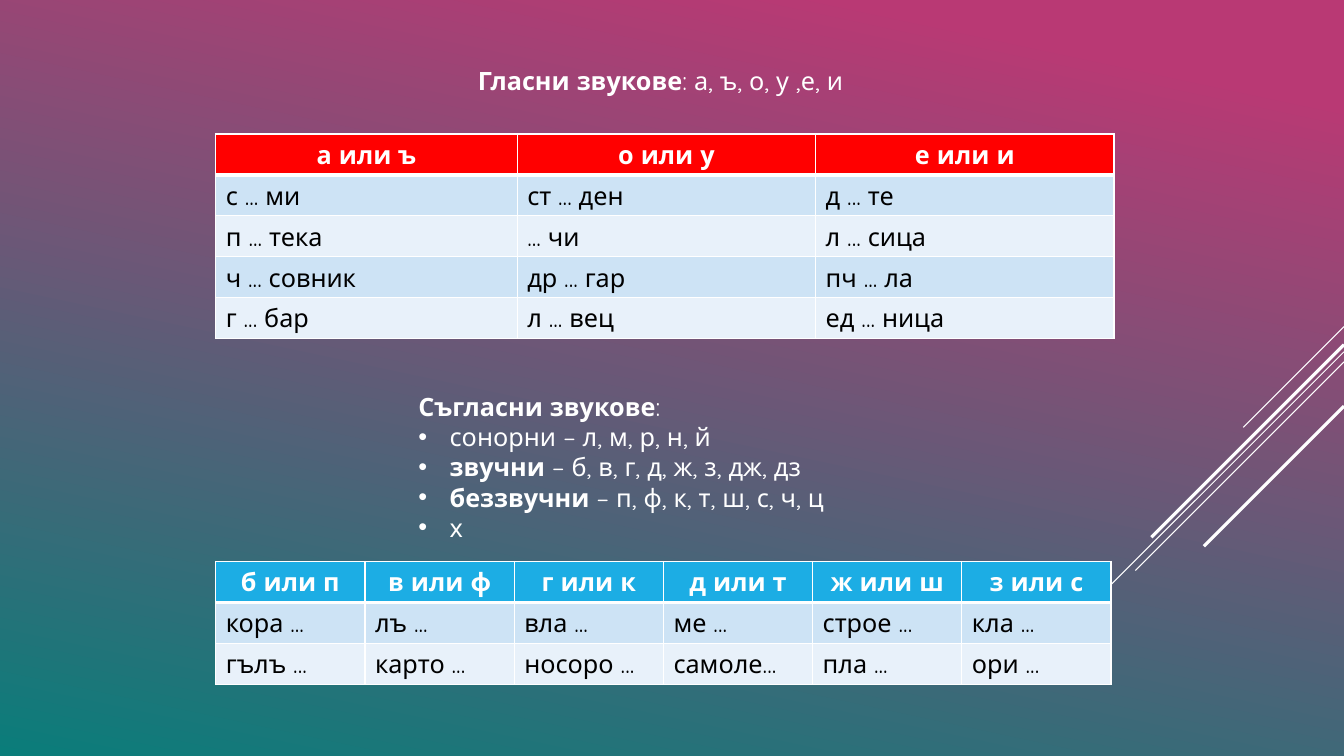
"""Build a Bulgarian spelling slide on vowels and consonants."""
from pptx import Presentation
from pptx.dml.color import RGBColor
from pptx.enum.shapes import MSO_CONNECTOR as CONN
from pptx.enum.text import MSO_ANCHOR as ANCHOR, MSO_AUTO_SIZE as AUTO, PP_ALIGN as ALIGN
from pptx.oxml.ns import qn
from pptx.util import Inches, Pt
from lxml.etree import SubElement

WHITE = RGBColor(0xFF, 0xFF, 0xFF)
BLACK = RGBColor(0, 0, 0)
PINK = RGBColor(0xB9, 0x39, 0x74)
TEAL = RGBColor(0x0A, 0x7D, 0x7A)
RED = RGBColor(0xFF, 0, 0)
BLUE = RGBColor(0x1C, 0xAD, 0xE4)
BANDS = (RGBColor(0xCD, 0xE3, 0xF5), RGBColor(0xE8, 0xF1, 0xFA))

FONT = {"name": "Quicksand", "size": Pt(18)}
FRAME = {"word_wrap": True, "auto_size": AUTO.SHAPE_TO_FIT_TEXT,
         "vertical_anchor": ANCHOR.TOP,
         "margin_left": Inches(0.1), "margin_right": Inches(0.1),
         "margin_top": Inches(0.05), "margin_bottom": Inches(0.05)}
PARAGRAPH = {"alignment": ALIGN.LEFT, "line_spacing": 1.0,
             "space_before": Pt(0), "space_after": Pt(0)}

RAYS = [(3.24, 1.0, 0.75), (3.49, 3.26, 0.75), (3.59, 2.07, 0.75),
        (3.42, 1.91, 2.25), (4.03, 1.39, 2.25)]
VOWELS = [("Гласни звукове", ": а, ъ, о, у ,е, и")]
CONSONANTS = [("Съгласни звукове", ":"),
              ("", "сонорни – л, м, р, н, й"),
              ("звучни", " – б, в, г, д, ж, з, дж, дз"),
              ("беззвучни", " – п, ф, к, т, ш, с, ч, ц"),
              ("", "х")]
VOWEL_ROWS = [("а или ъ", "о или у", "е или и"),
              ("с ... ми", "ст ... ден", "д ... те"),
              ("п ... тека", "... чи", "л ... сица"),
              ("ч ... совник", "др ... гар", "пч ... ла"),
              ("г ... бар", "л ... вец", "ед ... ница")]
CONSONANT_ROWS = [("б или п", "в или ф", "г или к", "д или т", "ж или ш", "з или с"),
                  ("кора ...", "лъ ...", "вла ...", "ме ...", "строе ...", "кла ..."),
                  ("гълъ ...", "карто ...", "носоро ...", "самоле...", "пла ...", "ори ...")]


def apply(obj, values):
    """Set every attribute named in a dict of format values."""
    for name, value in values.items():
        setattr(obj, name, value)


def add_run(p, text, bold, color):
    """Add one formatted run to a paragraph."""
    r = p.add_run()
    r.text = text
    apply(r.font, {**FONT, "bold": bold})
    r.font.color.rgb = color


def set_background(s):
    """Fill the slide background with the diagonal gradient."""
    fill = s.background.fill
    fill.gradient()
    fill.gradient_angle = 258
    for stop, position, color in zip(fill.gradient_stops, (0.1, 1.0), (PINK, TEAL)):
        stop.position = position
        stop.color.rgb = color


def add_ray(s, top, reach, width):
    """Draw a 45-degree line running down from the right edge."""
    right = 13.33
    line = s.shapes.add_connector(CONN.STRAIGHT, Inches(right), Inches(top),
                                  Inches(right - reach), Inches(top + reach))
    line.line.color.rgb = WHITE
    line.line.width = Pt(width)
    SubElement(line._element.spPr, qn("a:effectLst"))


def fill_placeholder(sp, box, lines):
    """Place a placeholder and write its lines, bulleted after the first."""
    sp.left, sp.top, sp.width, sp.height = (Inches(v) for v in box)
    tf = sp.text_frame
    apply(tf, FRAME)
    for i, (strong, plain) in enumerate(lines):
        p = tf.add_paragraph() if i else tf.paragraphs[0]
        apply(p, PARAGRAPH)
        pPr = p._p.get_or_add_pPr()
        indent = Inches(0.31) if i else 0
        pPr.set("marL", str(indent))
        pPr.set("indent", str(-indent))
        if not i:
            SubElement(pPr, qn("a:buNone"))
        for text, bold in ((strong, True), (plain, False)):
            if text:
                add_run(p, text, bold, WHITE)


def set_borders(cell, row):
    """Give a cell white borders, thick beneath the header row."""
    tcPr = cell._tc.get_or_add_tcPr()
    widths = {"L": 1, "R": 1, "T": 3 if row == 1 else 1, "B": 3 if row == 0 else 1}
    for side, width in widths.items():
        ln = SubElement(tcPr, qn(f"a:ln{side}"), w=str(Pt(width)))
        fill = SubElement(ln, qn("a:solidFill"))
        SubElement(fill, qn("a:srgbClr"), val=str(WHITE))


def add_word_table(s, top, col_widths, rows, header_color):
    """Add a banded word table with a coloured header row."""
    row_height = Inches(0.406)
    table = s.shapes.add_table(len(rows), len(col_widths), Inches(2.14), Inches(top),
                               Inches(sum(col_widths)), row_height * len(rows)).table
    for col, width in zip(table.columns, col_widths):
        col.width = Inches(width)
    for i, words in enumerate(rows):
        table.rows[i].height = row_height
        header = i == 0
        for j, word in enumerate(words):
            cell = table.cell(i, j)
            set_borders(cell, i)
            cell.fill.solid()
            cell.fill.fore_color.rgb = header_color if header else BANDS[(i - 1) % 2]
            p = cell.text_frame.paragraphs[0]
            p.alignment = ALIGN.CENTER if header else ALIGN.LEFT
            add_run(p, word, header, WHITE if header else BLACK)


def main():
    """Create the slide and save it."""
    prs = Presentation()
    prs.slide_width, prs.slide_height = Inches(13.33), Inches(7.5)
    s = prs.slides.add_slide(prs.slide_layouts[1])
    set_background(s)
    for ray in RAYS:
        add_ray(s, *ray)
    fill_placeholder(s.shapes.title, (4.64, 0.6, 3.9, 0.4), VOWELS)
    add_word_table(s, 1.33, (2.99, 2.96, 2.96), VOWEL_ROWS, RED)
    fill_placeholder(s.placeholders[1], (4.05, 3.83, 4.6, 1.62), CONSONANTS)
    add_word_table(s, 5.57, (1.48,) * 6, CONSONANT_ROWS, BLUE)
    prs.save("out.pptx")


if __name__ == "__main__":
    main()
